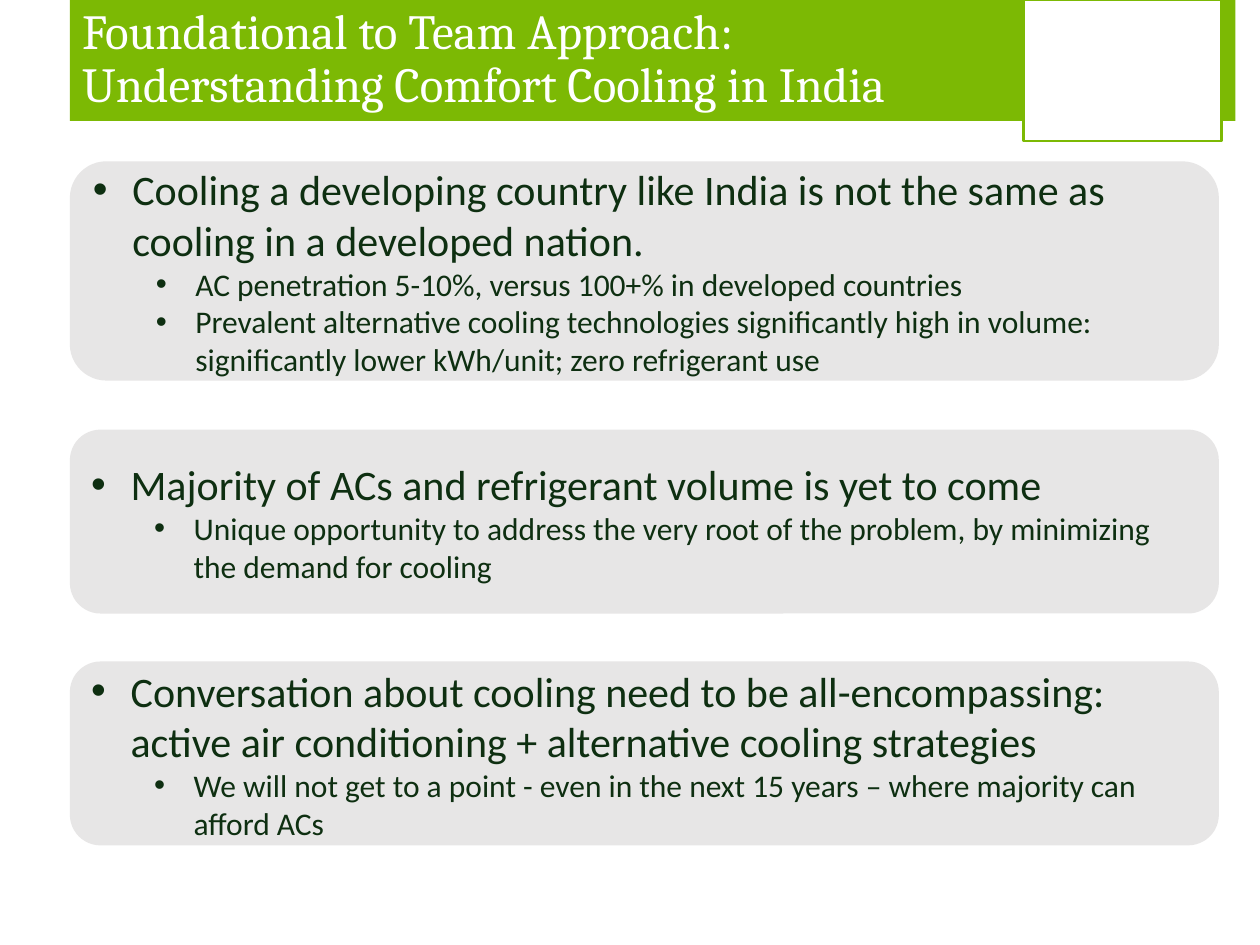
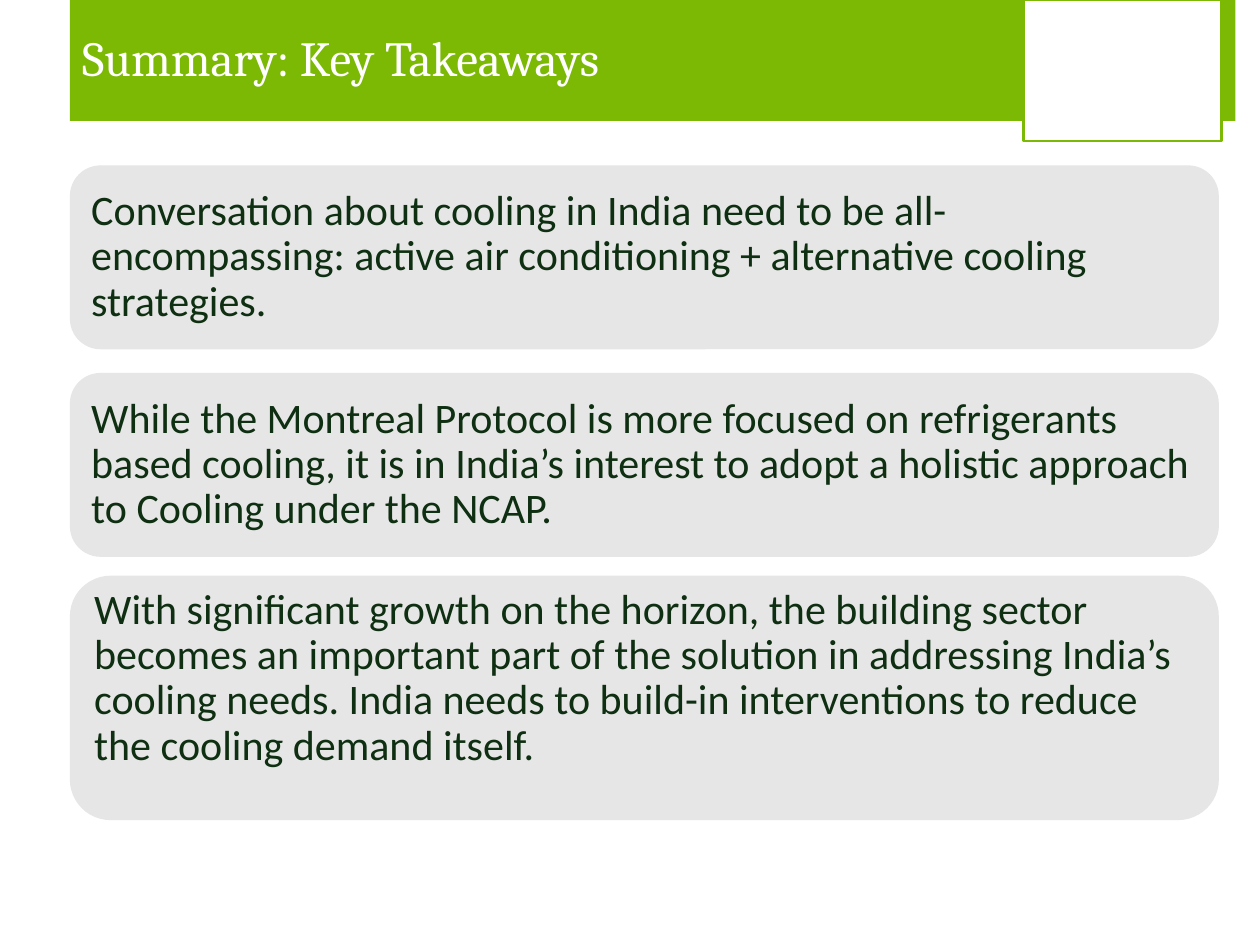
"""Build two slides on comfort cooling in India, with a shared title band and rounded panels."""
from dataclasses import dataclass

from lxml import etree
from pptx import Presentation
from pptx.dml.color import RGBColor
from pptx.enum import shapes, text
from pptx.oxml import ns
from pptx.util import Pt


@dataclass(frozen=True)
class Theme:
    """Colours, fonts and type sizes of the deck."""
    green: RGBColor = RGBColor.from_string("7CB904")
    white: RGBColor = RGBColor.from_string("FFFFFF")
    grey: RGBColor = RGBColor.from_string("E7E6E6")
    ink: RGBColor = RGBColor.from_string("0E2F11")
    title_font: str = "Cambria"
    body_font: str = "Calibri"
    title_size: float = 28
    level_sizes: tuple[float, float] = (24, 18)
    tight: float = 0.9


@dataclass(frozen=True)
class Area:
    """A rectangle in points."""
    left: float
    top: float
    width: float
    height: float

    def lengths(self) -> list[Pt]:
        """Return the four lengths in the order python-pptx expects."""
        return [Pt(v) for v in (self.left, self.top, self.width, self.height)]


@dataclass(frozen=True)
class Panel:
    """A grey rounded panel with a statement and optional supporting points."""
    top: float
    height: float
    statement: str
    points: tuple[str, ...] = ()
    space_below: float = 0


@dataclass(frozen=True)
class Page:
    """The content of one slide."""
    title: str
    panels: tuple[Panel, ...]
    bulleted: bool


THEME = Theme()
LEFT = 39.9
PANEL_WIDTH = 656.6
PANEL_HEIGHT = 105.1
INSET = 3.6
HANGING = 22.5
LEVEL_STEP = 36
BAND = Area(LEFT, 0, 666, 69.1)
TITLE = Area(LEFT, 0, 545, 69.1)
BADGE = Area(584.9, 0, 113, 80.6)

PAGES = (
    Page("Foundational to Team Approach: Understanding Comfort Cooling in India", (
        Panel(92.2, 125.3,
              "Cooling a developing country like India is not the same as cooling in a developed nation.",
              ("AC penetration 5-10%, versus 100+% in developed countries",
               "Prevalent alternative cooling technologies significantly high in volume: "
               "significantly lower kWh/unit; zero refrigerant use")),
        Panel(245.5, PANEL_HEIGHT,
              "Majority of ACs and refrigerant volume is yet to come",
              ("Unique opportunity to address the very root of the problem, "
               "by minimizing the demand for cooling",)),
        Panel(378, PANEL_HEIGHT,
              "Conversation about cooling need to be all-encompassing: "
              "active air conditioning + alternative cooling strategies",
              ("We will not get to a point - even in the next 15 years – "
               "where majority can afford ACs",)),
    ), bulleted=True),
    Page("Summary: Key Takeaways", (
        Panel(94.5, PANEL_HEIGHT,
              "Conversation about cooling in India need to be all-encompassing: "
              "active air conditioning + alternative cooling strategies."),
        Panel(213.1, PANEL_HEIGHT,
              "While the Montreal Protocol is more focused on refrigerants based cooling, it is in "
              "India’s interest to adopt a holistic approach to Cooling under the NCAP."),
        Panel(329, 139.7,
              "With significant growth on the horizon, the building sector becomes an important part "
              "of the solution in addressing India’s cooling needs. India needs to build-in "
              "interventions to reduce the cooling demand itself.", space_below=22),
    ), bulleted=False),
)


def add_block(page, kind: shapes.MSO_SHAPE, area: Area, fill: RGBColor, line: RGBColor | None = None):
    """Add a flat filled shape, outlined only when a line colour is given."""
    block = page.shapes.add_shape(kind, *area.lengths())
    block.shadow.inherit = False
    block.fill.solid()
    block.fill.fore_color.rgb = fill
    if line is None:
        block.line.fill.background()
    else:
        block.line.color.rgb = line
        block.line.width = Pt(1.5)
    return block


def prepare_frame(box):
    """Make the text of a box wrap and sit in its vertical middle."""
    frame = box.text_frame
    frame.word_wrap = True
    frame.vertical_anchor = text.MSO_ANCHOR.MIDDLE
    frame.margin_left = frame.margin_right = Pt(2 * INSET)
    frame.margin_top = frame.margin_bottom = Pt(INSET)
    return frame


def write(para, words: str, font: str, size: float, color: RGBColor) -> None:
    """Write one left-aligned run into a paragraph."""
    para.alignment = text.PP_ALIGN.LEFT
    span = para.add_run()
    span.text = words
    span.font.name = font
    span.font.size = Pt(size)
    span.font.color.rgb = color


def add_bullet(para, level: int) -> None:
    """Give a paragraph a hanging round bullet at its level."""
    para.level = level
    properties = para._p.get_or_add_pPr()
    properties.set("marL", str(Pt(HANGING + level * LEVEL_STEP)))
    properties.set("indent", str(Pt(-HANGING)))
    etree.SubElement(properties, ns.qn("a:buFont"), typeface="Arial")
    etree.SubElement(properties, ns.qn("a:buChar"), char="•")


def add_header(page, title: str) -> None:
    """Draw the green band, the white badge and the slide title."""
    add_block(page, shapes.MSO_SHAPE.RECTANGLE, BAND, THEME.green)
    add_block(page, shapes.MSO_SHAPE.RECTANGLE, BADGE, THEME.white, THEME.green)
    para = prepare_frame(page.shapes.add_textbox(*TITLE.lengths())).paragraphs[0]
    para.line_spacing = THEME.tight
    write(para, title, THEME.title_font, THEME.title_size, THEME.white)


def add_panel(page, panel: Panel, bulleted: bool) -> None:
    """Draw one rounded panel with its statement and points."""
    area = Area(LEFT, panel.top, PANEL_WIDTH, panel.height)
    box = add_block(page, shapes.MSO_SHAPE.ROUNDED_RECTANGLE, area, THEME.grey)
    frame = prepare_frame(box)
    frame.margin_bottom = Pt(INSET + panel.space_below)
    for index, words in enumerate((panel.statement, *panel.points)):
        para = frame.add_paragraph() if index else frame.paragraphs[0]
        level = min(index, 1)
        if bulleted:
            add_bullet(para, level)
        else:
            para.line_spacing = THEME.tight
        write(para, words, THEME.body_font, THEME.level_sizes[level], THEME.ink)


def main() -> None:
    """Build and save the deck."""
    deck = Presentation()
    deck.slide_width, deck.slide_height = Pt(720), Pt(540)
    for content in PAGES:
        page = deck.slides.add_slide(deck.slide_layouts[6])
        add_header(page, content.title)
        for panel in content.panels:
            add_panel(page, panel, content.bulleted)
    deck.save("out.pptx")


if __name__ == "__main__":
    main()
